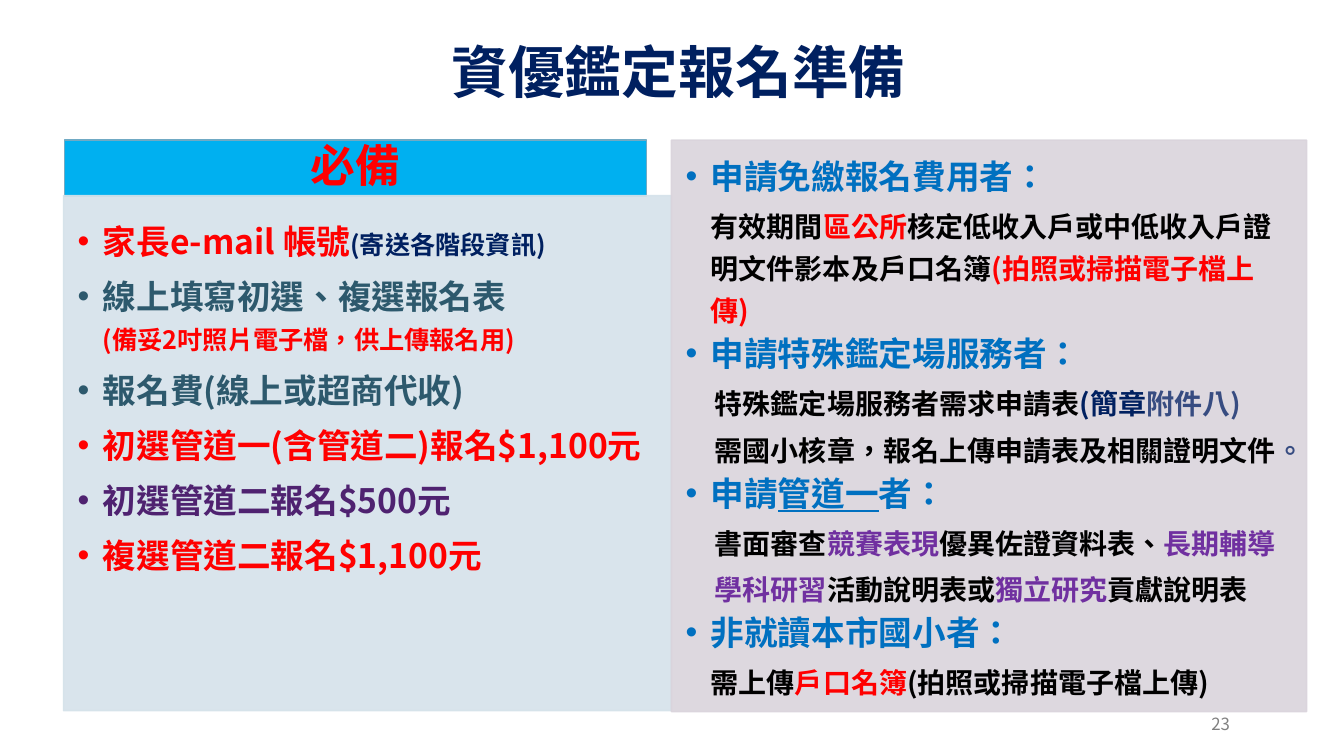
from lxml.etree import SubElement
from pptx import Presentation
from pptx.dml.color import RGBColor
from pptx.enum.shapes import MSO_SHAPE
from pptx.enum.text import MSO_ANCHOR, PP_ALIGN
from pptx.oxml.ns import qn
from pptx.util import Inches, Pt

SANS = "Noto Sans CJK SC"
SANS_TC = "Noto Sans CJK TC"
WHITE = RGBColor(0xFF, 0xFF, 0xFF)
BLACK = RGBColor(0, 0, 0)
RED = RGBColor(0xFF, 0, 0)
NAVY = RGBColor(0, 0x20, 0x60)
SLATE_BLUE = RGBColor(0x37, 0x4C, 0x81)
BLUE = RGBColor(0, 0x70, 0xC0)
TEAL = RGBColor(0x2D, 0x59, 0x6D)
PLUM = RGBColor(0x4F, 0x22, 0x70)
PURPLE = RGBColor(0x70, 0x30, 0xA0)
GRAY = RGBColor(0x80, 0x80, 0x80)
HEADER_FILL = RGBColor(0, 0xB0, 0xF0)
HEADER_LINE = RGBColor(0x70, 0xAA, 0xC4)
REQUIRED_FILL = RGBColor(0xD5, 0xE2, 0xEA)
SPECIAL_FILL = RGBColor(0xDA, 0xD4, 0xDC)

REQUIRED_ITEMS = [
    [("家長e-mail 帳號", RED, 24), ("(寄送各階段資訊)", NAVY, 18)],
    [("線上填寫初選、複選報名表", TEAL, 24), ("\n", RED, 18),
     ("(備妥2吋照片電子檔，供上傳報名用)", RED, 18)],
    [("報名費(線上或超商代收)", TEAL, 24)],
    [("初選管道一(含管道二)報名$1,100元", RED, 24)],
    [("初選管道二報名$500元", PLUM, 24)],
    [("複選管道二報名$1,100元", RED, 24)],
]

SPECIAL_CASES = [
    ([("申請免繳報名費用者", False)], 0.25, 0, [
        [("有效期間", BLACK), ("區公所", RED),
         ("核定低收入戶或中低收入戶證明文件影本及戶口名簿", BLACK),
         ("(拍照或掃描電子檔上傳)", RED)],
    ]),
    ([("申請特殊鑑定場服務者", False)], 0, 0.29, [
        [("特殊鑑定場服務者需求申請表", BLACK), ("(簡章", NAVY), ("附件八)", SLATE_BLUE)],
        [("需國小核章，報名上傳申請表及相關證明文件", BLACK), ("。", SLATE_BLUE)],
    ]),
    ([("申請", False), ("管道一", True), ("者", False)], 0, 0.29, [
        [("書面審查", BLACK), ("競賽表現", PURPLE),
         ("優異佐證資料表、", BLACK), ("長期輔導", PURPLE)],
        [("學科研習", PURPLE), ("活動說明表或", BLACK),
         ("獨立研究", PURPLE), ("貢獻說明表", BLACK)],
    ]),
    ([("非就讀本市國小者", False)], 0.25, 0, [
        [("需上傳", BLACK), ("戶口名簿", RED), ("(拍照或掃描電子檔上傳)", BLACK)],
    ]),
]


def add_text(paragraph, text, size=24, color=BLACK, font=SANS, bold=True, underline=False):
    """Append one formatted run, or a line break, to a paragraph."""
    if text == "\n":
        paragraph.add_line_break()
        return
    run = paragraph.add_run()
    run.text = text
    run.font.size = Pt(size)
    run.font.bold = bold
    run.font.underline = underline
    run.font.name = font
    run.font.color.rgb = color
    properties = run._r.get_or_add_rPr()
    properties.set("lang", "zh-TW")
    east_asian = SubElement(properties, qn("a:ea"))
    east_asian.set("typeface", font)
    properties.find(qn("a:latin")).addnext(east_asian)


def format_paragraph(paragraph, left=0, indent=0, bullet=False,
                     align=PP_ALIGN.LEFT, line_spacing=1.0, after=0):
    """Set indents, bullet, alignment and spacing of a paragraph."""
    properties = paragraph._p.get_or_add_pPr()
    properties.set("marL", str(Inches(left)))
    properties.set("indent", str(Inches(indent)))
    if bullet:
        SubElement(properties, qn("a:buFont")).set("typeface", "Arial")
        SubElement(properties, qn("a:buChar")).set("char", "•")
    else:
        SubElement(properties, qn("a:buNone"))
    paragraph.alignment = align
    paragraph.line_spacing = line_spacing
    paragraph.space_before = Pt(0)
    paragraph.space_after = Pt(after)


def set_frame(frame, margins, anchor):
    """Set the wrap, insets and anchor of a text frame."""
    frame.word_wrap = True
    frame.vertical_anchor = anchor
    left, top, right, bottom = (Inches(margin) for margin in margins)
    frame.margin_left, frame.margin_top = left, top
    frame.margin_right, frame.margin_bottom = right, bottom


def add_panel(slide, box, fill, line, margins=(0.14, 0.14, 0.19, 0.21),
              anchor=MSO_ANCHOR.TOP, opacity=None):
    """Add a filled rectangle and return its text frame."""
    shape = slide.shapes.add_shape(MSO_SHAPE.RECTANGLE, *(Inches(part) for part in box))
    shape.shadow.inherit = False
    shape.fill.solid()
    shape.fill.fore_color.rgb = fill
    shape.line.color.rgb = line
    shape.line.width = Pt(1)
    if opacity:
        for color in shape._element.spPr.iter(qn("a:srgbClr")):
            SubElement(color, qn("a:alpha")).set("val", str(opacity * 1000))
    set_frame(shape.text_frame, margins, anchor)
    return shape.text_frame


def next_paragraph(frame):
    """Return the unused first paragraph of a frame, or a new one."""
    first = frame.paragraphs[0]
    return frame.add_paragraph() if first.runs else first


def add_label(slide, box, text, margins, align, **text_format):
    """Add a one-line text box anchored at its bottom."""
    text_box = slide.shapes.add_textbox(*(Inches(part) for part in box))
    set_frame(text_box.text_frame, margins, MSO_ANCHOR.BOTTOM)
    paragraph = text_box.text_frame.paragraphs[0]
    format_paragraph(paragraph, align=align, line_spacing=0.9)
    add_text(paragraph, text, **text_format)


def add_required_header(slide, box):
    """Add the blue heading above the required items."""
    frame = add_panel(slide, box, HEADER_FILL, HEADER_LINE,
                      (0.25, 0.14, 0.25, 0.14), MSO_ANCHOR.MIDDLE)
    paragraph = frame.paragraphs[0]
    format_paragraph(paragraph, align=PP_ALIGN.CENTER, line_spacing=0.9)
    add_text(paragraph, "必備", size=32, color=RED)


def add_required_items(slide, box):
    """Add the bulleted panel of required items."""
    frame = add_panel(slide, box, REQUIRED_FILL, REQUIRED_FILL, opacity=90)
    for item in REQUIRED_ITEMS:
        paragraph = next_paragraph(frame)
        format_paragraph(paragraph, 0.25, -0.25, bullet=True, line_spacing=1.27, after=2.9)
        for text, color, size in item:
            add_text(paragraph, text, size=size, color=color)


def add_special_cases(slide, box):
    """Add the panel of special cases, each a heading with details."""
    frame = add_panel(slide, box, SPECIAL_FILL, SPECIAL_FILL, opacity=90)
    for heading, left, indent, details in SPECIAL_CASES:
        paragraph = next_paragraph(frame)
        format_paragraph(paragraph, 0.25, -0.25, bullet=True, line_spacing=Pt(30), after=3.6)
        for text, underline in heading:
            add_text(paragraph, text, color=BLUE, underline=underline)
        add_text(paragraph, "：", color=BLUE, font=SANS_TC)
        for detail in details:
            paragraph = next_paragraph(frame)
            format_paragraph(paragraph, left, indent, line_spacing=Pt(30), after=3)
            for text, color in detail:
                add_text(paragraph, text, size=20, color=color)


def main():
    """Build the slide and save it."""
    presentation = Presentation()
    presentation.slide_width = Inches(13.33)
    presentation.slide_height = Inches(7.5)
    slide = presentation.slides.add_slide(presentation.slide_layouts[6])
    slide.background.fill.solid()
    slide.background.fill.fore_color.rgb = WHITE
    add_label(slide, (0.63, 0.09, 12.33, 1), "資優鑑定報名準備 ",
              (0.07, 0.04, 0.07, 0.04), PP_ALIGN.CENTER, size=40.5, color=NAVY)
    add_required_header(slide, (0.64, 1.39, 5.77, 0.56))
    add_required_items(slide, (0.63, 1.94, 6.03, 5.11))
    add_special_cases(slide, (6.66, 1.39, 6.3, 5.67))
    add_label(slide, (11.12, 7, 1.21, 0.35), "23", (0.13, 0.07, 0.13, 0.07),
              PP_ALIGN.RIGHT, size=12, color=GRAY, font=SANS_TC, bold=False)
    presentation.save("out.pptx")


if __name__ == "__main__":
    main()
